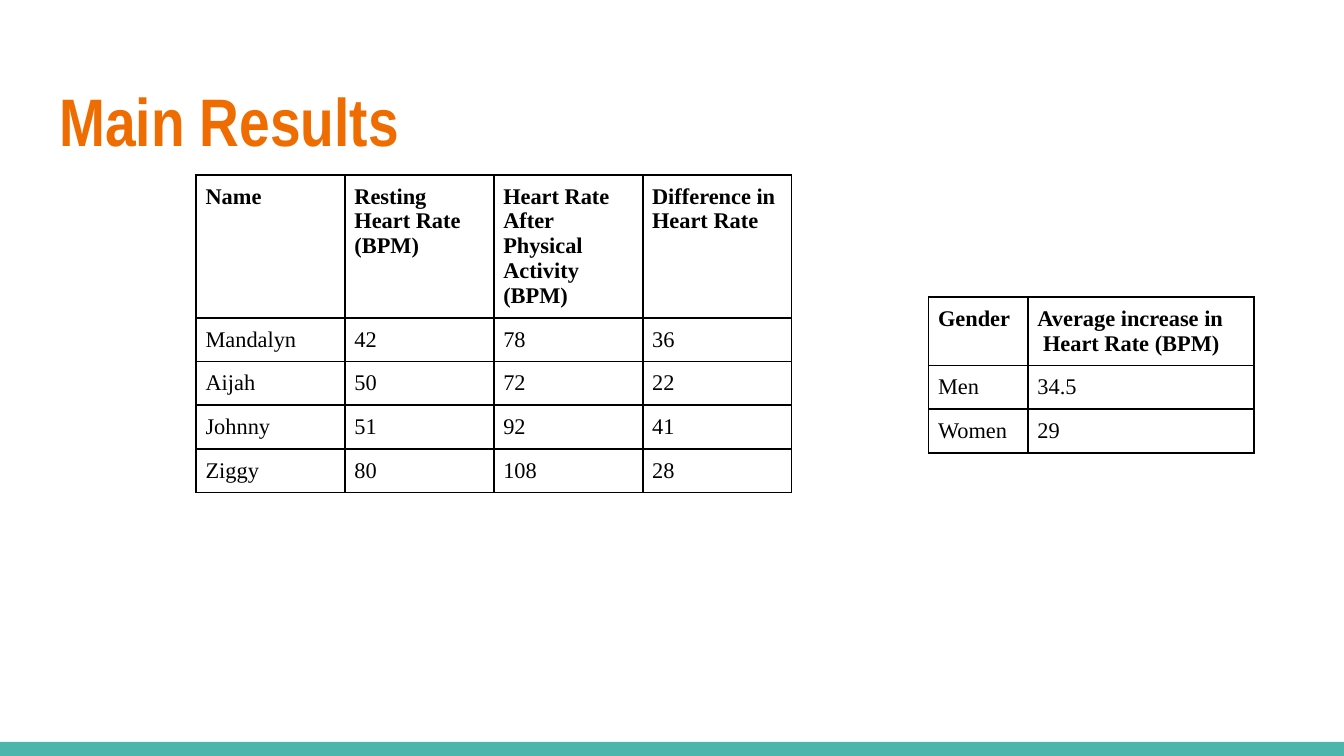
"""Build the Main Results slide with its two heart rate tables."""
from lxml import etree
from pptx import Presentation
from pptx import util as u
from pptx.dml.color import RGBColor
from pptx.enum import shapes, text
from pptx.oxml import ns

SLIDE_WIDTH = 10
SLIDE_HEIGHT = SLIDE_WIDTH * 9 / 16
TITLE = "Main Results"
ORANGE, TEAL, BLACK, WHITE = "EF6C00", "4DB6AC", "000000", "FFFFFF"
TABLES = [
    {
        "left": 1.46, "top": 1.3, "widths": [4.43 / 4] * 4,
        "header_height": 0.5, "row_height": 0.23,
        "rows": [
            ("Name", "Resting Heart Rate (BPM)",
             "Heart Rate After Physical Activity (BPM)", "Difference in Heart Rate"),
            ("Mandalyn", "42", "78", "36"),
            ("Aijah", "50", "72", "22"),
            ("Johnny", "51", "92", "41"),
            ("Ziggy", "80", "108", "28"),
        ],
    },
    {
        "left": 6.91, "top": 2.21, "widths": [0.74, 1.68],
        "header_height": 0.01, "row_height": 0.01,
        "rows": [
            ("Gender", "Average increase in\n Heart Rate (BPM)"),
            ("Men", "34.5"),
            ("Women", "29"),
        ],
    },
]


def paint(fill, color):
    fill.solid()
    fill.fore_color.rgb = RGBColor.from_string(color)


def write(frame, content, font="Times New Roman", size=12, color=BLACK, bold=False):
    frame.text = content
    for paragraph in frame.paragraphs:
        paragraph.alignment = text.PP_ALIGN.LEFT
        for run in paragraph.runs:
            run.font.name = font
            run.font.size = u.Pt(size)
            run.font.bold = bold
            run.font.color.rgb = RGBColor.from_string(color)


def set_margins(holder, inches):
    for side in ("left", "right", "top", "bottom"):
        setattr(holder, f"margin_{side}", u.Inches(inches))


def add_borders(cell, color=BLACK, width=1):
    properties = cell._tc.get_or_add_tcPr()
    for side in ("lnL", "lnR", "lnT", "lnB"):
        line = etree.SubElement(properties, ns.qn(f"a:{side}"), w=str(u.Pt(width)))
        solid = etree.SubElement(line, ns.qn("a:solidFill"))
        etree.SubElement(solid, ns.qn("a:srgbClr"), val=color)


def add_results(slide, left, top, widths, header_height, row_height, rows):
    heights = [header_height] + [row_height] * (len(rows) - 1)
    table = slide.shapes.add_table(
        len(rows), len(widths), u.Inches(left), u.Inches(top),
        u.Inches(sum(widths)), u.Inches(sum(heights))).table
    table.first_row = table.horz_banding = False
    for column, width in zip(table.columns, widths):
        column.width = u.Inches(width)
    for r, (values, height) in enumerate(zip(rows, heights)):
        table.rows[r].height = u.Inches(height)
        for c, value in enumerate(values):
            cell = table.cell(r, c)
            set_margins(cell, 0.07)
            add_borders(cell)
            cell.fill.background()
            write(cell.text_frame, value, bold=r == 0)


def main():
    deck = Presentation()
    deck.slide_width, deck.slide_height = u.Inches(SLIDE_WIDTH), u.Inches(SLIDE_HEIGHT)
    slide = deck.slides.add_slide(deck.slide_layouts[5])
    paint(slide.background.fill, WHITE)

    footer_bar = slide.shapes.add_shape(
        shapes.MSO_SHAPE.RECTANGLE, 0, u.Inches(5.52), u.Inches(SLIDE_WIDTH), u.Inches(0.11))
    footer_bar.shadow.inherit = False
    paint(footer_bar.fill, TEAL)
    footer_bar.line.fill.background()

    title = slide.shapes.title
    title.left, title.top = u.Inches(0.34), u.Inches(0.49)
    title.width, title.height = u.Inches(9.32), u.Inches(0.77)
    frame = title.text_frame
    set_margins(frame, 0.1)
    frame.auto_size = text.MSO_AUTO_SIZE.NONE
    frame.vertical_anchor = text.MSO_ANCHOR.TOP
    write(frame, TITLE, font="Arial Narrow", size=36, color=ORANGE, bold=True)

    for results in TABLES:
        add_results(slide, **results)
    deck.save("out.pptx")


if __name__ == "__main__":
    main()
